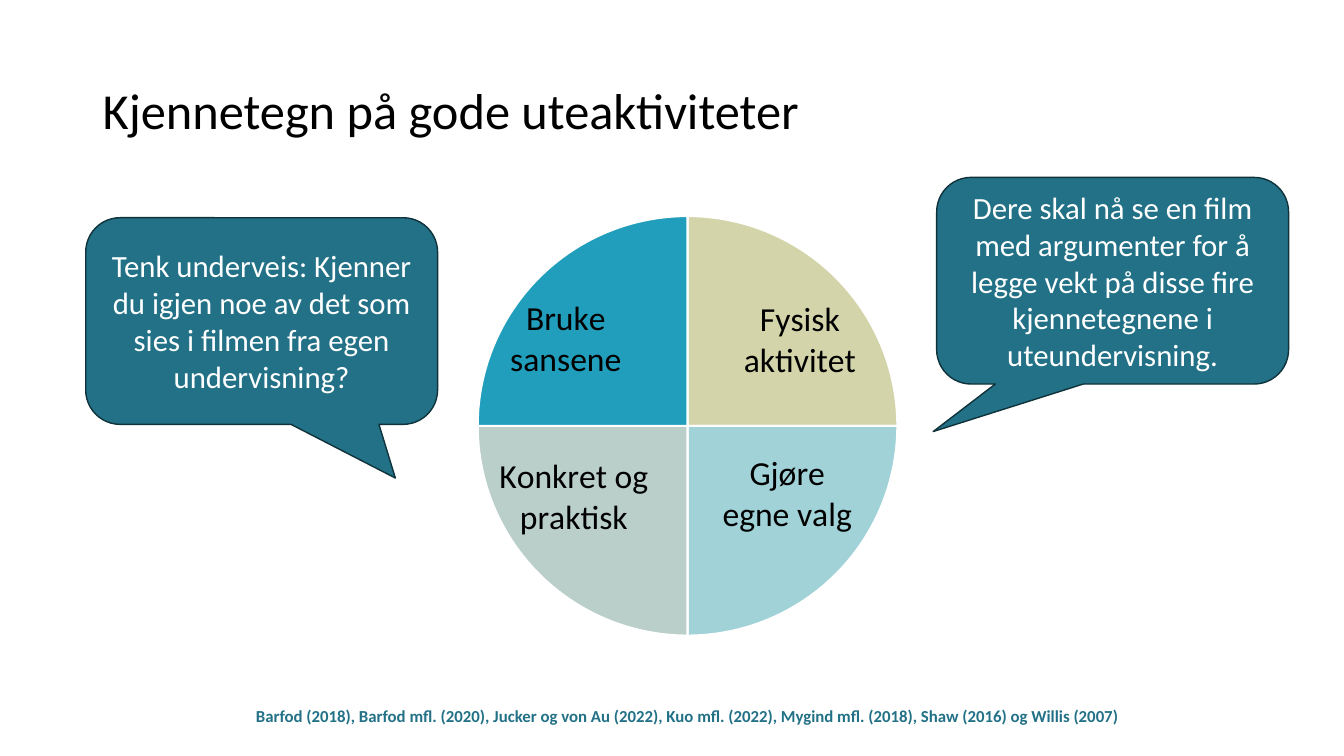
from lxml.etree import SubElement
from pptx import Presentation
from pptx.chart.data import CategoryChartData
from pptx.dml.color import RGBColor
from pptx.enum.chart import XL_CHART_TYPE, XL_LABEL_POSITION
from pptx.enum.shapes import MSO_SHAPE
from pptx.enum.text import MSO_ANCHOR, PP_ALIGN
from pptx.oxml import parse_xml
from pptx.oxml.ns import nsdecls, qn
from pptx.util import Emu, Pt

PX = 9144
FONT = "Calibri"
BLACK = RGBColor(0x00, 0x00, 0x00)
WHITE = RGBColor(0xFF, 0xFF, 0xFF)
TEAL = RGBColor(0x22, 0x71, 0x86)
DARK_TEAL = RGBColor(0x0F, 0x32, 0x3B)
SAND = RGBColor(0xD4, 0xD4, 0xAA)
AQUA = RGBColor(0xA0, 0xD2, 0xD8)
SAGE = RGBColor(0xBA, 0xCF, 0xCA)
BLUE = RGBColor(0x21, 0x9E, 0xBC)

CHART_BOX = (92, 200, 1150, 476)
SLICES = [
    ("Sanser", SAND, ["Fysisk aktivitet"], (38, -11)),
    ("Konkret og praktisk", AQUA, ["Konkret og", "praktisk"], (-186, -2)),
    ("Egne valg", SAGE, ["Gjøre", "egne valg"], (173, -5)),
    ("Fysisk aktivitet", BLUE, ["Bruke sansene"], (-47, -12)),
]


def px(*lengths):
    return [Emu(n * PX) for n in lengths]


def style_font(font, size, color, bold=False):
    font.name = FONT
    font.size = Pt(size)
    font.bold = bold
    font.color.rgb = color


def add_text(tf, text, size, color, align=PP_ALIGN.LEFT, bold=False):
    tf.word_wrap = True
    p = tf.paragraphs[0]
    p.alignment = align
    r = p.add_run()
    r.text = text
    style_font(r.font, size, color, bold)
    return p


def add_title(s, box, text):
    tf = s.shapes.add_textbox(*px(*box)).text_frame
    tf.vertical_anchor = MSO_ANCHOR.MIDDLE
    add_text(tf, text, 36, BLACK).line_spacing = 0.9


def add_references(s, box, text):
    tf = s.shapes.add_textbox(*px(*box)).text_frame
    add_text(tf, text, 12, TEAL, PP_ALIGN.CENTER, True)


def add_callout(s, box, tip, text):
    sp = s.shapes.add_shape(MSO_SHAPE.ROUNDED_RECTANGULAR_CALLOUT, *px(*box))
    sp.adjustments[0], sp.adjustments[1] = tip
    sp.shadow.inherit = False
    sp.fill.solid()
    sp.fill.fore_color.rgb = TEAL
    sp.line.color.rgb = DARK_TEAL
    sp.line.width = Pt(1)
    sp.text_frame.vertical_anchor = MSO_ANCHOR.MIDDLE
    add_text(sp.text_frame, text, 22, WHITE, PP_ALIGN.CENTER)


def manual_layout(**values):
    layout = parse_xml(f"<c:layout {nsdecls('c')}><c:manualLayout/></c:layout>")
    for tag, val in values.items():
        SubElement(layout[0], qn(f"c:{tag}")).set("val", str(val))
    return layout


def label_slice(series, index, lines, shift):
    label = series.points[index].data_label
    tf = label.text_frame
    for i, line in enumerate(lines):
        p = tf.paragraphs[0] if i == 0 else tf.add_paragraph()
        r = p.add_run()
        r.text = line
        style_font(r.font, 24, BLACK)
    label.position = XL_LABEL_POSITION.CENTER
    dx, dy = shift
    width, height = CHART_BOX[2:]
    layout = manual_layout(x=round(dx / width, 3), y=round(dy / height, 3))
    d_lbl = series.points[index].data_label._dLbl
    d_lbl.find(qn("c:idx")).addnext(layout)


def add_pie(s):
    data = CategoryChartData()
    data.categories = [name for name, *_ in SLICES]
    data.add_series("Series 1", [25] * len(SLICES))
    chart = s.shapes.add_chart(XL_CHART_TYPE.PIE, *px(*CHART_BOX), data).chart
    chart.has_legend = False
    chart.has_title = False
    style_font(chart.font, 10, BLACK)
    plot = chart.plots[0]
    plot.vary_by_categories = True
    plot_area = chart._chartSpace.chart.plotArea
    for old in plot_area.findall(qn("c:layout")):
        plot_area.remove(old)
    plot_area.insert(0, manual_layout(
        layoutTarget="inner", xMode="edge", yMode="edge",
        x=0.332, y=0.03, w=0.362, h=0.875))
    series = plot.series[0]
    labels = series.data_labels
    labels.show_category_name = True
    labels.show_value = False
    labels.position = XL_LABEL_POSITION.CENTER
    style_font(labels.font, 24, BLACK)
    for i, (_, color, lines, shift) in enumerate(SLICES):
        fmt = series.points[i].format
        fmt.fill.solid()
        fmt.fill.fore_color.rgb = color
        fmt.line.color.rgb = WHITE
        fmt.line.width = Pt(1.5)
        label_slice(series, i, lines, shift)


def main():
    prs = Presentation()
    prs.slide_width, prs.slide_height = px(1333, 750)
    s = prs.slides.add_slide(prs.slide_layouts[6])
    add_title(s, (92, 40, 1150, 145), "Kjennetegn på gode uteaktiviteter")
    add_pie(s)
    add_callout(s, (929, 176, 349, 205), (-0.51, 0.73),
                "Dere skal nå se en film med argumenter for å legge vekt på "
                "disse fire kjennetegnene i uteundervisning.")
    add_references(s, (237, 695, 894, 30),
                   "Barfod (2018), Barfod mfl. (2020), Jucker og von Au (2022), "
                   "Kuo mfl. (2022), Mygind mfl. (2018), Shaw (2016) og Willis (2007) ")
    add_callout(s, (85, 216, 349, 205), (0.38, 0.76),
                "Tenk underveis: Kjenner du igjen noe av det som sies i filmen "
                "fra egen undervisning?")
    prs.save("out.pptx")


if __name__ == "__main__":
    main()
